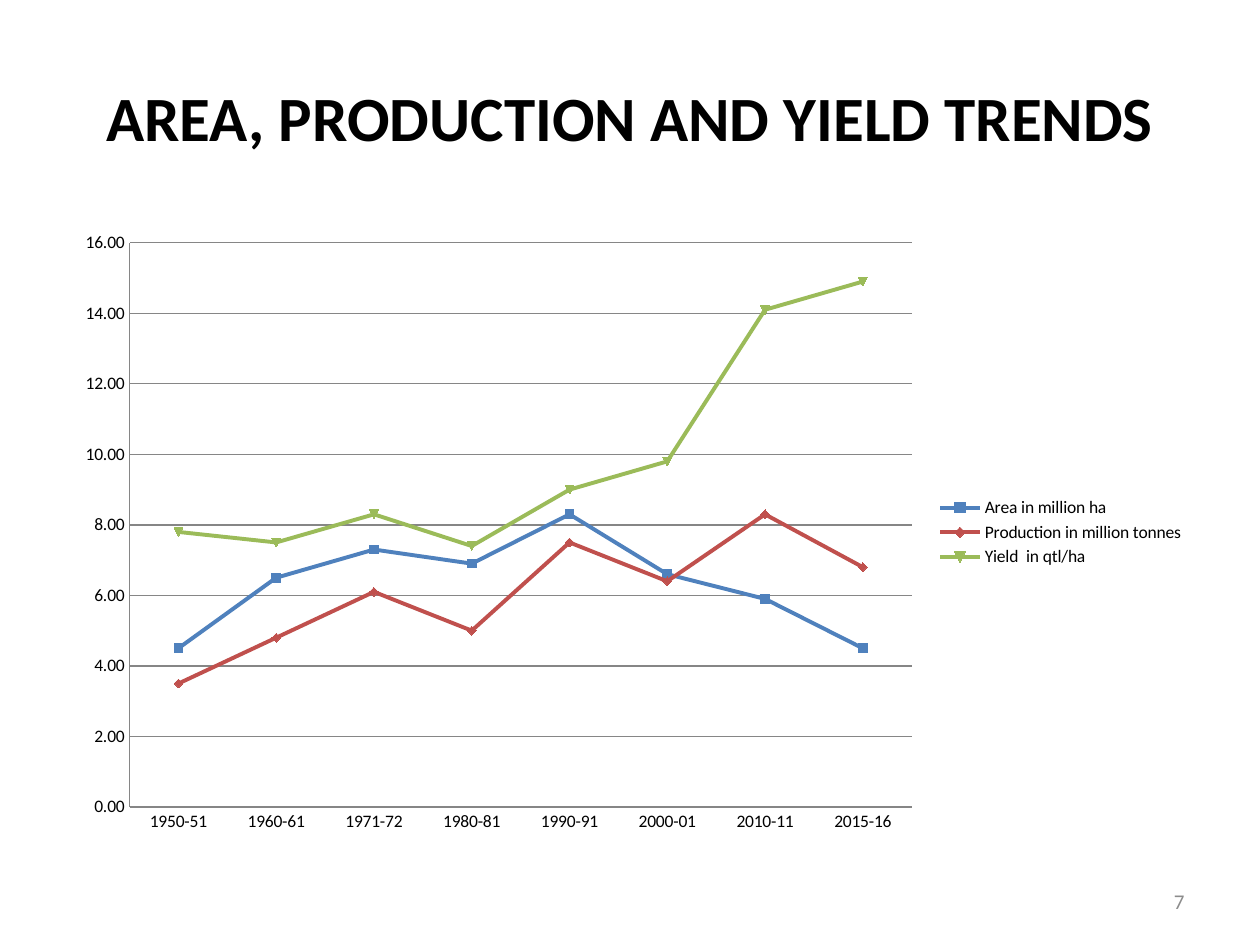
from dataclasses import dataclass

from pptx import Presentation
from pptx.chart.data import CategoryChartData
from pptx.dml.color import RGBColor as RGB
from pptx.enum.chart import XL_CHART_TYPE as CT, XL_LEGEND_POSITION as LP, XL_TICK_MARK as TM
from pptx.enum.text import MSO_ANCHOR as MA, PP_ALIGN as AL
from pptx.util import Inches, Pt


@dataclass(frozen=True)
class Theme:
    font: str = "Calibri"
    ink: str = "000000"
    muted: str = "8C8C8C"
    grid: str = "868686"
    lines: tuple = ("4F81BD", "C0504D", "9BBB59")
    title_pt: float = 36
    chart_pt: float = 10
    number_pt: float = 12
    line_pt: float = 2.25
    grid_pt: float = 0.75


THEME = Theme()
TEXTS = [
    {"text": "AREA, PRODUCTION AND YIELD TRENDS", "at": (0.5, 0.3, 9, 1.25),
     "align": AL.CENTER, "size": THEME.title_pt, "color": THEME.ink, "bold": True},
    {"text": "7", "at": (7.17, 6.95, 2.33, 0.4),
     "align": AL.RIGHT, "size": THEME.number_pt, "color": THEME.muted, "bold": False},
]
CHART_AT = (0.5, 1.75, 9, 4.95)
YEARS = ["1950-51", "1960-61", "1971-72", "1980-81",
         "1990-91", "2000-01", "2010-11", "2015-16"]
SERIES = {
    "Area in million ha": (4.5, 6.5, 7.3, 6.9, 8.3, 6.6, 5.9, 4.5),
    "Production in million tonnes": (3.5, 4.8, 6.1, 5, 7.5, 6.4, 8.3, 6.8),
    "Yield  in qtl/ha": (7.8, 7.5, 8.3, 7.4, 9, 9.8, 14.1, 14.9),
}


def apply(obj, **values):
    for name, value in values.items():
        setattr(obj, name, value)


def style_font(font, size, color, bold=False):
    apply(font, name=THEME.font, size=Pt(size), bold=bold)
    font.color.rgb = RGB.from_string(color)


def style_line(line, color, width):
    line.color.rgb = RGB.from_string(color)
    line.width = Pt(width)


def add_text(s, item):
    tf = s.shapes.add_textbox(*map(Inches, item["at"])).text_frame
    apply(tf, word_wrap=True, vertical_anchor=MA.MIDDLE)
    p = tf.paragraphs[0]
    p.alignment = item["align"]
    r = p.add_run()
    r.text = item["text"]
    style_font(r.font, item["size"], item["color"], item["bold"])


def add_trends(s):
    data = CategoryChartData(number_format="0.00")
    data.categories = YEARS
    for name, values in SERIES.items():
        data.add_series(name, values)
    chart = s.shapes.add_chart(CT.LINE_MARKERS, *map(Inches, CHART_AT), data).chart
    style_font(chart.font, THEME.chart_pt, THEME.ink)
    apply(chart, has_title=False, has_legend=True)
    apply(chart.legend, position=LP.RIGHT, include_in_layout=False)
    chart.plots[0].vary_by_categories = False

    for axis in (chart.category_axis, chart.value_axis):
        apply(axis, major_tick_mark=TM.NONE, minor_tick_mark=TM.NONE)
        style_line(axis.format.line, THEME.grid, THEME.grid_pt)
    val = chart.value_axis
    apply(val, minimum_scale=0, maximum_scale=16, major_unit=2, has_major_gridlines=True)
    style_line(val.major_gridlines.format.line, THEME.grid, THEME.grid_pt)
    apply(val.tick_labels, number_format="0.00", number_format_is_linked=False)

    for series, color in zip(chart.plots[0].series, THEME.lines):
        series.smooth = False
        style_line(series.format.line, color, THEME.line_pt)


def main():
    prs = Presentation()
    apply(prs, slide_width=Inches(10), slide_height=Inches(7.5))
    s = prs.slides.add_slide(prs.slide_layouts[6])
    add_trends(s)
    for item in TEXTS:
        add_text(s, item)
    prs.save("out.pptx")


if __name__ == "__main__":
    main()
